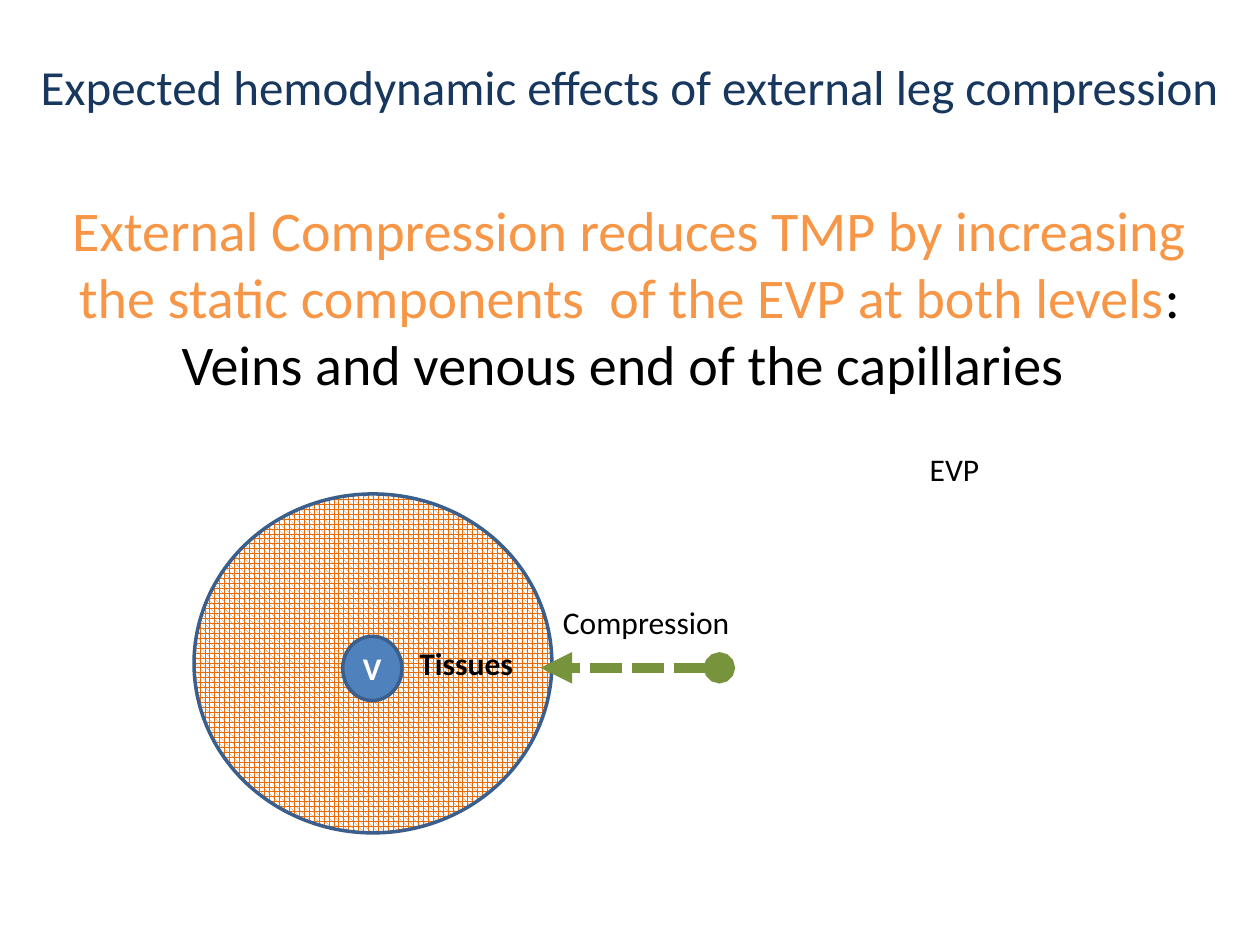
from typing import NamedTuple

from lxml import etree
from pptx import Presentation
from pptx import util as u
from pptx.dml.color import RGBColor
from pptx.enum import dml, shapes, text
from pptx.oxml.ns import qn

WIDTH, HEIGHT = u.Inches(10), u.Inches(7.5)
FONT = "Calibri"
NAVY = RGBColor(0x17, 0x37, 0x5E)
ORANGE = RGBColor(0xF7, 0x96, 0x46)
TISSUE = RGBColor(0xE4, 0x6C, 0x0A)
VEIN = RGBColor(0x4F, 0x81, 0xBD)
OUTLINE = RGBColor(0x3A, 0x5F, 0x8C)
GREEN = RGBColor(0x77, 0x93, 0x3C)
BLACK = RGBColor(0, 0, 0)
WHITE = RGBColor(0xFF, 0xFF, 0xFF)


class Box(NamedTuple):
    """Left, top, width and height in inches."""
    left: float
    top: float
    width: float
    height: float

    def lengths(self):
        return [u.Inches(side) for side in self]


class Label(NamedTuple):
    wording: str
    box: Box
    bold: bool = False


LABELS = [
    Label("EVP", Box(7.28, 3.52, 1.18, 0.4)),
    Label("Tissues", Box(3.23, 5.06, 1.18, 0.4), bold=True),
    Label("Compression", Box(4.37, 4.74, 1.57, 0.4)),
]


def write(frame, *runs, size=18, bold=False, align=text.PP_ALIGN.LEFT,
          anchor=text.MSO_ANCHOR.TOP):
    """Fill a text frame with one paragraph of (wording, colour) runs."""
    frame.word_wrap = True
    frame.auto_size = text.MSO_AUTO_SIZE.NONE
    frame.vertical_anchor = anchor
    paragraph = frame.paragraphs[0]
    paragraph.alignment = align
    for wording, colour in runs:
        run = paragraph.add_run()
        run.text = wording
        run.font.name, run.font.size, run.font.bold = FONT, u.Pt(size), bold
        run.font.color.rgb = colour


def add_text(slide, box: Box, *runs, **style):
    write(slide.shapes.add_textbox(*box.lengths()).text_frame, *runs, **style)


def add_circle(slide, box: Box):
    circle = slide.shapes.add_shape(shapes.MSO_SHAPE.OVAL, *box.lengths())
    circle.shadow.inherit = False
    circle.line.color.rgb = OUTLINE
    circle.line.width = u.Pt(2)
    return circle


def add_pressure_arrow(slide, start: float, end: float, level: float):
    """Draw a dashed horizontal arrow with a round tail."""
    arrow = slide.shapes.add_connector(
        shapes.MSO_CONNECTOR.STRAIGHT,
        u.Inches(start), u.Inches(level), u.Inches(end), u.Inches(level))
    arrow.line.color.rgb = GREEN
    arrow.line.width = u.Pt(6)
    arrow.line.dash_style = dml.MSO_LINE.SQUARE_DOT
    outline = arrow.line._get_or_add_ln()
    for tag, kind in (("a:headEnd", "oval"), ("a:tailEnd", "triangle")):
        etree.SubElement(outline, qn(tag), type=kind)
    etree.SubElement(arrow._element.spPr, qn("a:effectLst"))


def main():
    deck = Presentation()
    deck.slide_width, deck.slide_height = WIDTH, HEIGHT
    slide = deck.slides.add_slide(deck.slide_layouts[5])

    title = slide.shapes.title
    title.left, title.top, title.width, title.height = Box(0.19, 0.4, 9.61, 0.6).lengths()
    write(title.text_frame,
          ("Expected hemodynamic effects of external leg compression", NAVY),
          size=28, align=text.PP_ALIGN.CENTER)
    add_text(slide, Box(0.19, 1.5, 9.61, 2.3),
             ("External Compression reduces TMP by increasing the static "
              "components  of the EVP at both levels", ORANGE),
             (": Veins and venous end of the capillaries ", BLACK),
             size=32, align=text.PP_ALIGN.CENTER)

    leg = add_circle(slide, Box(1.54, 3.92, 2.84, 2.69))
    leg.fill.patterned()
    leg.fill.pattern = dml.MSO_PATTERN.SPHERE
    leg.fill.fore_color.rgb = TISSUE
    leg.fill.back_color.rgb = WHITE

    for label in LABELS:
        add_text(slide, label.box, (label.wording, BLACK), bold=label.bold)
    add_pressure_arrow(slide, start=5.71, end=4.29, level=5.3)

    vein = add_circle(slide, Box(2.72, 5.05, 0.47, 0.51))
    vein.fill.solid()
    vein.fill.fore_color.rgb = VEIN
    frame = vein.text_frame
    frame.margin_left = frame.margin_right = frame.margin_top = frame.margin_bottom = 0
    write(frame, ("V", WHITE), bold=True, align=text.PP_ALIGN.CENTER,
          anchor=text.MSO_ANCHOR.MIDDLE)

    deck.save("out.pptx")


if __name__ == "__main__":
    main()
